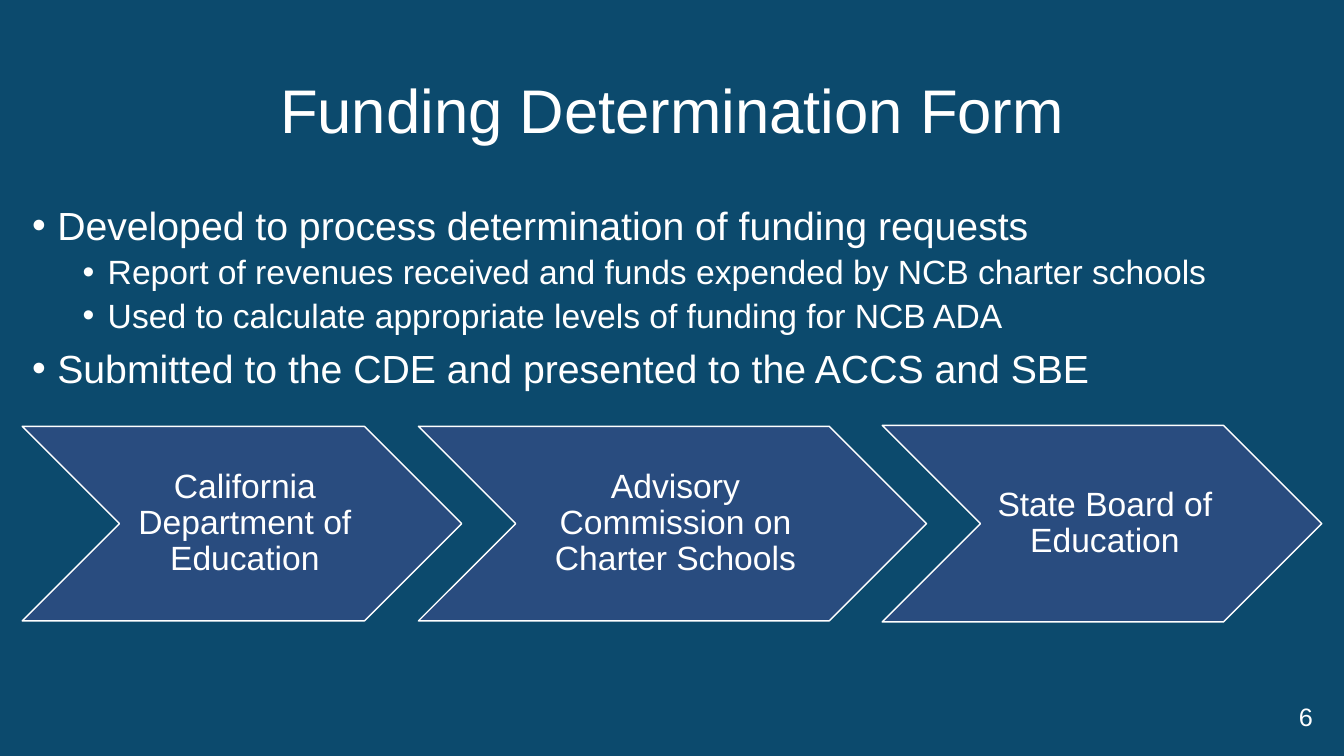
"""Build the Funding Determination Form slide."""
from lxml import etree
from pptx import Presentation
from pptx.dml.color import RGBColor
from pptx.enum.shapes import MSO_SHAPE
from pptx.enum.text import MSO_ANCHOR, PP_ALIGN
from pptx.oxml.ns import qn
from pptx.util import Inches, Pt

CHEVRON = MSO_SHAPE.CHEVRON
MIDDLE = MSO_ANCHOR.MIDDLE
CENTER, RIGHT, LEFT = PP_ALIGN.CENTER, PP_ALIGN.RIGHT, PP_ALIGN.LEFT
NAVY, BLUE, WHITE = "0C4A6D", "294C7F", "FFFFFF"


def color(code):
    return RGBColor.from_string(code)


def style(para, size, align, spacing=0.9):
    para.alignment = align
    para.line_spacing = spacing
    para.font.name = "Arial"
    para.font.size = Pt(size)
    para.font.color.rgb = color(WHITE)


deck = Presentation()
deck.slide_width, deck.slide_height = Inches(13.33), Inches(7.5)
slide = deck.slides.add_slide(deck.slide_layouts[5])
slide.background.fill.solid()
slide.background.fill.fore_color.rgb = color(NAVY)

title = slide.shapes.title
title.left, title.top = Inches(0.22), Inches(0.4)
title.width, title.height = Inches(12.9), Inches(1.45)
title.text_frame.text = "Funding Determination Form"
title.text_frame.vertical_anchor = MIDDLE
style(title.text_frame.paragraphs[0], 44, CENTER)

points = [
    (0, "Developed to process determination of funding requests"),
    (1, "Report of revenues received and funds expended by NCB charter schools"),
    (1, "Used to calculate appropriate levels of funding for NCB ADA"),
    (0, "Submitted to the CDE and presented to the ACCS and SBE"),
]
body = slide.shapes.add_textbox(
    Inches(0.22), Inches(2), Inches(12.89), Inches(2.1)).text_frame
body.word_wrap = True
for index, (level, text) in enumerate(points):
    para = body.add_paragraph() if index else body.paragraphs[0]
    para.text = text
    para.level = level
    props = para._p.get_or_add_pPr()
    props.set("marL", str(Inches(0.25 + 0.5 * level)))
    props.set("indent", str(Inches(-0.25)))
    etree.SubElement(props, qn("a:buFont")).set("typeface", "Arial")
    etree.SubElement(props, qn("a:buChar")).set("char", "•")
    style(para, 24 if level else 28, LEFT)
    if index:
        para.space_before = Pt(5 if level else 10)

steps = [
    (0.22, 4.23, 4.36, 1.93, "California Department of Education"),
    (4.15, 4.23, 5.04, 1.93, "Advisory Commission on Charter Schools"),
    (8.75, 4.22, 4.36, 1.95, "State Board of Education"),
]
for left, top, width, height, text in steps:
    step = slide.shapes.add_shape(
        CHEVRON, Inches(left), Inches(top), Inches(width), Inches(height))
    step.shadow.inherit = False
    step.fill.solid()
    step.fill.fore_color.rgb = color(BLUE)
    step.line.color.rgb = color(WHITE)
    step.line.width = Pt(1)
    frame = step.text_frame
    frame.text = text
    frame.word_wrap = True
    frame.vertical_anchor = MIDDLE
    frame.margin_left = Inches(0.1)
    frame.margin_top = frame.margin_right = frame.margin_bottom = Inches(0.04)
    style(frame.paragraphs[0], 24, CENTER)

number = slide.shapes.add_textbox(
    Inches(12.56), Inches(6.91), Inches(0.56), Inches(0.4)).text_frame
number.word_wrap = True
number.vertical_anchor = MIDDLE
number.text = "6"
style(number.paragraphs[0], 18, RIGHT, 1.0)

deck.save("out.pptx")
